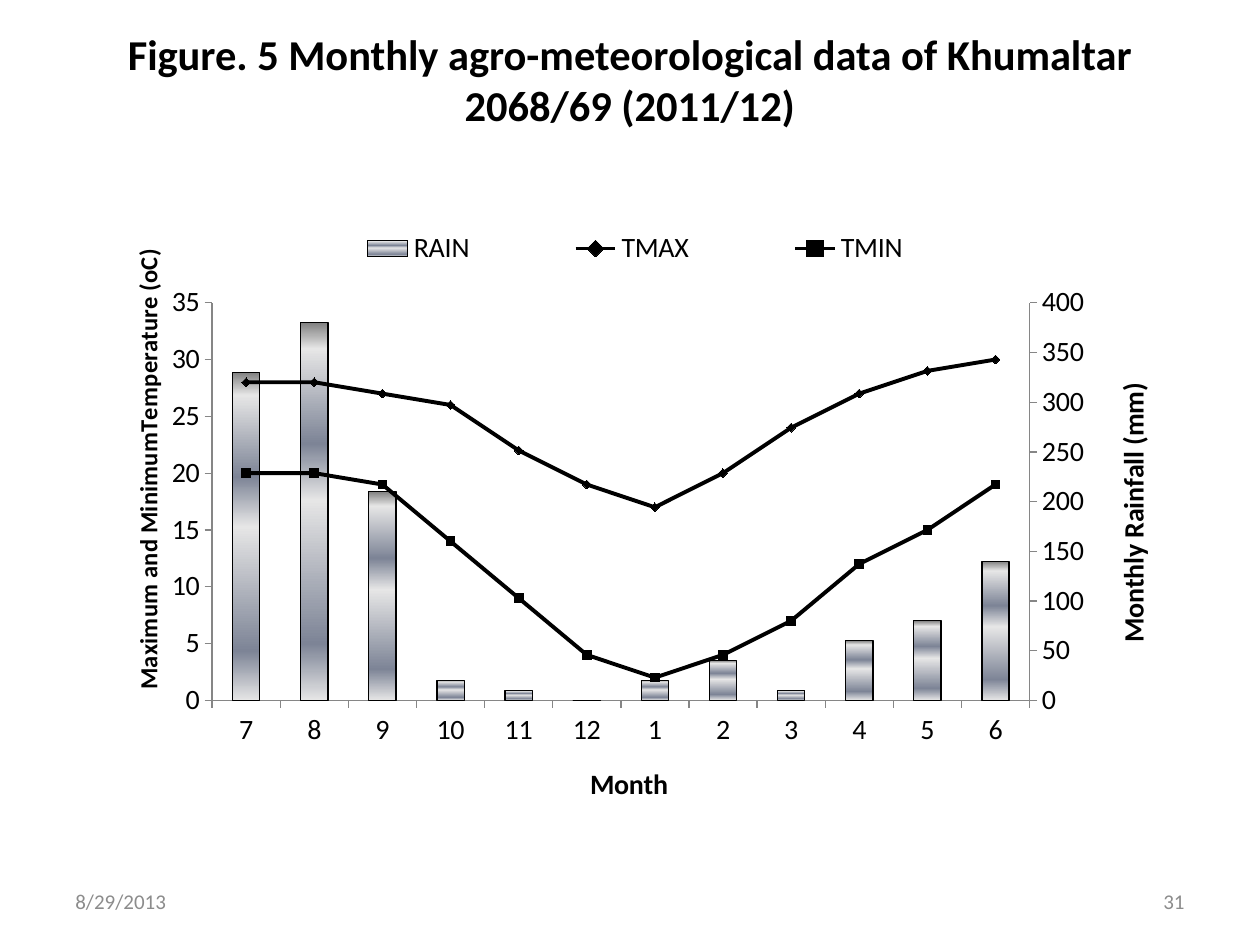
from copy import deepcopy

from lxml.etree import SubElement
from pptx import Presentation
from pptx.chart.axis import CategoryAxis, ValueAxis
from pptx.chart.data import CategoryChartData
from pptx.chart.series import LineSeries
from pptx.dml.color import RGBColor
from pptx.enum.chart import XL_CHART_TYPE as ChartType
from pptx.enum.chart import XL_LEGEND_POSITION as LegendPosition
from pptx.enum.chart import XL_MARKER_STYLE as Marker
from pptx.enum.chart import XL_TICK_LABEL_POSITION as LabelPosition
from pptx.enum.chart import XL_TICK_MARK as Tick
from pptx.enum.text import MSO_ANCHOR as Anchor
from pptx.enum.text import PP_ALIGN as Align
from pptx.oxml import parse_xml
from pptx.oxml.ns import nsdecls, qn
from pptx.util import Cm, Pt

COLORS = {"ink": "000000", "footer": "8C8C8C", "axis": "868686"}
RAIN_STOPS = [(0, "808080"), (7, "E6E6E6"), (32, "7D8496"),
              (47, "E6E6E6"), (85, "7D8496"), (100, "E6E6E6")]
MONTHS = ["7", "8", "9", "10", "11", "12", "1", "2", "3", "4", "5", "6"]
WEATHER = {
    "RAIN": [330, 380, 210, 20, 10, 0, 20, 40, 10, 60, 80, 140],
    "TMAX": [28, 28, 27, 26, 22, 19, 17, 20, 24, 27, 29, 30],
    "TMIN": [20, 20, 19, 14, 9, 4, 2, 4, 7, 12, 15, 19],
}


def rgb(name):
    return RGBColor.from_string(COLORS[name])


def place(parent, x, y, width=None, height=None, inner=False):
    """Give a chart part a manual layout, in fractions of the chart."""
    for old in parent.findall(qn("c:layout")):
        parent.remove(old)
    layout = parse_xml(f"<c:layout {nsdecls('c')}><c:manualLayout/></c:layout>")
    manual = layout[0]
    values = {"xMode": "edge", "yMode": "edge", "x": x, "y": y, "w": width, "h": height}
    if inner:
        values = {"layoutTarget": "inner", **values}
    for tag, value in values.items():
        if value is not None:
            SubElement(manual, qn(f"c:{tag}")).set("val", str(value))
    return layout


class WeatherSlide:
    font = "Calibri"
    chart_size = 16

    def __init__(self, deck):
        self.slide = deck.slides.add_slide(deck.slide_layouts[6])

    def style(self, font, size, color="ink", bold=False):
        font.name, font.size, font.bold = self.font, Pt(size), bold
        font.color.rgb = rgb(color)

    def text(self, words, left, top, width, height, size, color="ink",
             align=Align.LEFT, bold=False):
        box = self.slide.shapes.add_textbox(Cm(left), Cm(top), Cm(width), Cm(height))
        frame = box.text_frame
        frame.word_wrap = True
        frame.vertical_anchor = Anchor.MIDDLE
        para = frame.paragraphs[0]
        para.text, para.alignment = words, align
        self.style(para.font, size, color, bold)

    def axis(self, axis, title, spot, size=16, top=None, step=None):
        axis.has_major_gridlines = False
        axis.major_tick_mark, axis.minor_tick_mark = Tick.OUTSIDE, Tick.NONE
        axis.format.line.color.rgb = rgb("axis")
        axis.format.line.width = Pt(0.75)
        self.style(axis.tick_labels.font, self.chart_size)
        frame = axis.axis_title.text_frame
        frame.text = title
        self.style(frame.paragraphs[0].font, size, bold=True)
        if top:
            axis.minimum_scale, axis.maximum_scale, axis.major_unit = 0, top, step
            axis.tick_labels.number_format = "0"
            axis.tick_labels.number_format_is_linked = False
            body = frame._txBody.bodyPr
            body.set("rot", "-5400000")
            body.set("vert", "horz")
        holder = axis.axis_title._element
        holder.find(qn("c:tx")).addnext(place(holder, *spot))

    def bare_axis(self, axis):
        axis.has_major_gridlines = False
        axis.major_tick_mark = axis.minor_tick_mark = Tick.NONE
        axis.tick_label_position = LabelPosition.NONE
        axis.format.line.fill.background()

    def line(self, element, marker):
        for flag in element.findall(qn("c:invertIfNegative")):
            element.remove(flag)
        series = LineSeries(element)
        series.smooth = False
        series.format.line.color.rgb = rgb("ink")
        series.format.line.width = Pt(2.25)
        series.marker.style, series.marker.size = marker, 5
        series.marker.format.fill.solid()
        series.marker.format.fill.fore_color.rgb = rgb("ink")
        series.marker.format.line.color.rgb = rgb("ink")

    def bars(self, series):
        series.format.line.color.rgb = rgb("ink")
        series.format.line.width = Pt(0.75)
        stops = "".join(f'<a:gs pos="{spot * 1000}"><a:srgbClr val="{color}"/></a:gs>'
                        for spot, color in RAIN_STOPS)
        gradient = parse_xml(f"<a:gradFill {nsdecls('a')} rotWithShape=\"1\"><a:gsLst>{stops}"
                             '</a:gsLst><a:lin ang="5400000" scaled="0"/></a:gradFill>')
        series._element.find(qn("c:spPr")).insert(0, gradient)

    def climate_chart(self, left, top, width, height):
        data = CategoryChartData(number_format="0")
        data.categories = MONTHS
        for name, values in WEATHER.items():
            data.add_series(name, values)
        chart = self.slide.shapes.add_chart(
            ChartType.COLUMN_CLUSTERED, Cm(left), Cm(top), Cm(width), Cm(height), data).chart
        chart.has_title = False
        self.style(chart.font, self.chart_size)
        plot = chart.plots[0]
        plot.gap_width, plot.vary_by_categories = 150, False
        rain, *temperatures = [series._element for series in plot.series]
        self.bars(plot.series[0])

        # Second pair of axes for the temperature lines
        month, rainfall = chart.category_axis, chart.value_axis
        line_month, line_value = deepcopy(month._element), deepcopy(rainfall._element)
        for element, own, other in ((line_month, "501", "502"), (line_value, "502", "501")):
            element.find(qn("c:axId")).set("val", own)
            element.find(qn("c:crossAx")).set("val", other)
        rainfall._element.addnext(line_value)
        line_value.addnext(line_month)

        # Temperature lines on top of the rain columns
        lines = parse_xml(f"<c:lineChart {nsdecls('c')}><c:grouping val=\"standard\"/>"
                          '<c:varyColors val="0"/><c:marker val="1"/>'
                          '<c:axId val="501"/><c:axId val="502"/></c:lineChart>')
        rain.getparent().addnext(lines)
        for element, marker in zip(temperatures, (Marker.DIAMOND, Marker.SQUARE)):
            lines.find(qn("c:marker")).addprevious(element)
            self.line(element, marker)

        # Axes: rain on the right, temperature on the left, months below
        for tag, value in (("c:crosses", "max"), ("c:axPos", "r")):
            rainfall._element.find(qn(tag)).set("val", value)
        self.axis(rainfall, " Monthly Rainfall (mm)", (0.947, 0.286), top=400, step=50)
        self.axis(ValueAxis(line_value), "Maximum and MinimumTemperature (oC)",
                  (0.03, 0.084), size=14, top=35, step=5)
        self.axis(month, "Month", (0.458, 0.863))
        self.bare_axis(CategoryAxis(line_month))

        # Plot area and legend
        area = lines.getparent()
        area.insert(0, place(area, 0.11, 0.172, 0.763, 0.601, inner=True))
        chart.has_legend = True
        chart.legend.position = LegendPosition.RIGHT
        chart.legend.include_in_layout = False
        self.style(chart.legend.font, self.chart_size)
        holder = chart.legend._element
        holder.find(qn("c:legendPos")).addnext(place(holder, 0.165, 0.06, 0.68, 0.06))


def main():
    deck = Presentation()
    deck.slide_width, deck.slide_height = Cm(25.4), Cm(19.05)
    page = WeatherSlide(deck)
    page.text("Figure. 5 Monthly agro-meteorological data of Khumaltar 2068/69 (2011/12)",
              1.9, 0.43, 21.6, 2.34, 24.3, align=Align.CENTER, bold=True)
    page.climate_chart(1.9, 3.81, 21.6, 13.34)
    # Footer
    for words, left, align in (("8/29/2013", 1.27, Align.LEFT), ("31", 18.2, Align.RIGHT)):
        page.text(words, left, 17.65, 5.93, 1.02, 12, "footer", align)
    deck.save("out.pptx")


if __name__ == "__main__":
    main()
